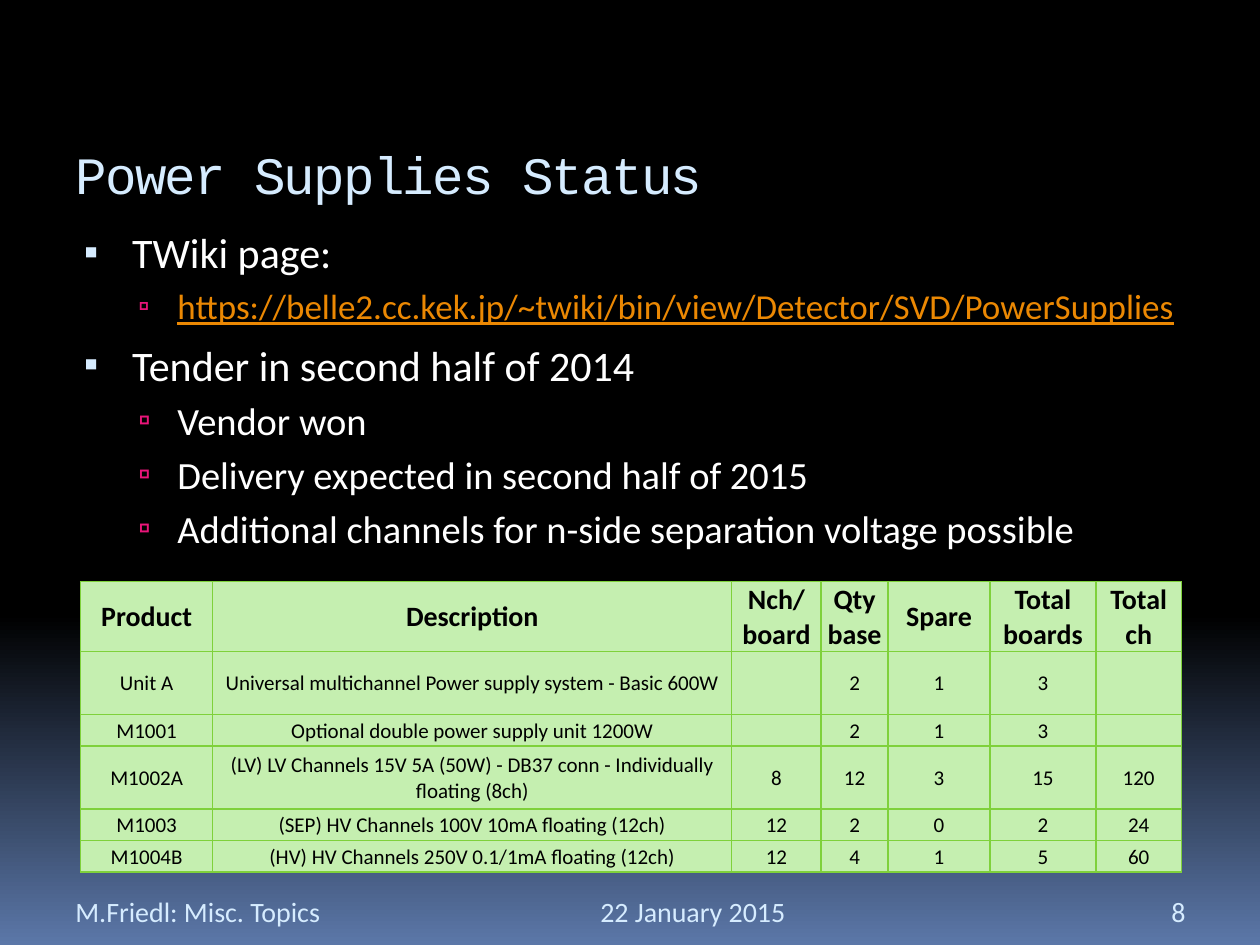
"""Build the power supplies status slide."""
from lxml import etree
from pptx import Presentation
from pptx.dml.color import RGBColor
from pptx.enum.text import MSO_ANCHOR, PP_ALIGN
from pptx.oxml.ns import qn
from pptx.util import Pt

LEFT, CENTER, RIGHT = PP_ALIGN.LEFT, PP_ALIGN.CENTER, PP_ALIGN.RIGHT
TOP, MIDDLE, BOTTOM = MSO_ANCHOR.TOP, MSO_ANCHOR.MIDDLE, MSO_ANCHOR.BOTTOM
BLACK = RGBColor(0x00, 0x00, 0x00)
WHITE = RGBColor(0xFF, 0xFF, 0xFF)
BLUE = RGBColor(0x5B, 0x77, 0xA8)
PALE = RGBColor(0xD6, 0xEC, 0xFF)
PINK = RGBColor(0xEA, 0x15, 0x7A)
ORANGE = RGBColor(0xEB, 0x88, 0x03)
GREEN = RGBColor(0x7F, 0xD1, 0x3B)
LIGHT_GREEN = RGBColor(0xC5, 0xEF, 0xB0)

LEVELS = [
    (32.4, 27.4, 7, "▪", PALE, 95),
    (58.3, 22.3, 4.4, "▫", PINK, 90),
]
BODY = [
    (0, "TWiki page:", {"size": 24}),
    (1, "https://belle2.cc.kek.jp/~twiki/bin/view/Detector/SVD/PowerSupplies",
     {"size": 20, "color": ORANGE, "underline": True}),
    (0, "Tender in second half of 2014", {"size": 24}),
    (1, "Vendor won", {"size": 22}),
    (1, "Delivery expected in second half of 2015", {"size": 22}),
    (1, "Additional channels for n-side separation voltage possible", {"size": 22}),
]
FOOTERS = [
    ("22 January 2015", 336, 144, LEFT),
    ("M.Friedl: Misc. Topics", 36, 378, LEFT),
    ("8", 624, 60.5, RIGHT),
]
COLUMNS = [75.6, 296.6, 51.1, 38.2, 58.3, 60.5, 49]
ROWS = [40, 36, 18, 36, 18, 18]
DATA = [
    ["Product", "Description", "Nch/ board", "Qty base", "Spare", "Total boards", "Total ch"],
    ["Unit A", "Universal multichannel Power supply system - Basic 600W", "", "2", "1", "3", ""],
    ["M1001", "Optional double power supply unit 1200W", "", "2", "1", "3", ""],
    ["M1002A", "(LV) LV Channels 15V 5A (50W) - DB37 conn - Individually floating (8ch)",
     "8", "12", "3", "15", "120"],
    ["M1003", "(SEP) HV Channels 100V 10mA floating (12ch)", "12", "2", "0", "2", "24"],
    ["M1004B", "(HV) HV Channels 250V 0.1/1mA floating (12ch)", "12", "4", "1", "5", "60"],
]


def write(p, text, size=16, color=WHITE, font="Calibri", bold=False, underline=False,
          align=LEFT, spacing=None):
    """Put formatted text into a paragraph."""
    p.alignment = align
    if not text:
        etree.SubElement(p._p, qn("a:endParaRPr"), sz=str(size * 100))
        return
    r = p.add_run()
    r.text = text
    f = r.font
    f.size, f.name, f.bold, f.underline = Pt(size), font, bold, underline
    f.color.rgb = color
    if spacing is not None:
        r._r.get_or_add_rPr().set("spc", str(spacing * 100))


def set_background(s):
    """Fade the slide from black to blue at the bottom."""
    fill = s.background.fill
    fill.gradient()
    fill.gradient_angle = 270
    for stop, position, color in zip(fill.gradient_stops, (0.65, 1), (BLACK, BLUE)):
        stop.position = position
        stop.color.rgb = color


def add_title(s, text):
    """Place and format the title placeholder."""
    sp = s.shapes.title
    sp.left, sp.top, sp.width, sp.height = Pt(36), Pt(72), Pt(648), Pt(54)
    sp.text_frame.vertical_anchor = MIDDLE
    write(sp.text_frame.paragraphs[0], text, size=30, color=PALE, font="Courier New", spacing=-1)


def add_box(s, left, top, width, height, anchor=TOP):
    """Add a wrapping text box and return its text frame."""
    tf = s.shapes.add_textbox(Pt(left), Pt(top), Pt(width), Pt(height)).text_frame
    tf.word_wrap = True
    tf.vertical_anchor = anchor
    return tf


def set_bullet(p, level, first):
    """Give a paragraph the bullet, indent and spacing of its level."""
    margin, hang, before, glyph, color, percent = LEVELS[level]
    p.level = level
    pPr = p._p.get_or_add_pPr()
    pPr.set("marL", str(Pt(margin)))
    pPr.set("indent", str(-Pt(hang)))
    clr = etree.SubElement(pPr, qn("a:buClr"))
    etree.SubElement(clr, qn("a:srgbClr"), val=str(color))
    etree.SubElement(pPr, qn("a:buSzPct"), val=str(percent * 1000))
    etree.SubElement(pPr, qn("a:buFont"), typeface="Calibri")
    etree.SubElement(pPr, qn("a:buChar"), char=glyph)
    if not first:
        p.space_before = Pt(before)


def add_bullets(s):
    """Add the bulleted body text."""
    tf = add_box(s, 36, 126, 660, 374.4)
    for i, (level, text, style) in enumerate(BODY):
        p = tf.add_paragraph() if i else tf.paragraphs[0]
        set_bullet(p, level, i == 0)
        write(p, text, **style)


def format_cell(cell):
    """Set the fill, margins and borders of a table cell."""
    cell.vertical_anchor = MIDDLE
    cell.margin_left = cell.margin_right = cell.margin_top = Pt(0.75)
    cell.margin_bottom = 0
    tcPr = cell._tc.get_or_add_tcPr()
    for side in ("lnL", "lnR", "lnT", "lnB"):
        ln = etree.SubElement(tcPr, qn("a:" + side), w=str(Pt(0.94)))
        solid = etree.SubElement(ln, qn("a:solidFill"))
        etree.SubElement(solid, qn("a:srgbClr"), val=str(GREEN))
    cell.fill.solid()
    cell.fill.fore_color.rgb = LIGHT_GREEN


def add_product_table(s):
    """Add the table of products and quantities."""
    frame = s.shapes.add_table(len(ROWS), len(COLUMNS), Pt(46), Pt(332.4),
                               Pt(sum(COLUMNS)), Pt(sum(ROWS)))
    table = frame.table
    table.horz_banding = False
    for column, width in zip(table.columns, COLUMNS):
        column.width = Pt(width)
    for i, (height, texts) in enumerate(zip(ROWS, DATA)):
        table.rows[i].height = Pt(height)
        for j, text in enumerate(texts):
            cell = table.cell(i, j)
            format_cell(cell)
            write(cell.text_frame.paragraphs[0], text, size=12 if i else 16,
                  color=BLACK, bold=i == 0, align=CENTER)


def main():
    """Build and save the presentation."""
    prs = Presentation()
    prs.slide_width, prs.slide_height = Pt(720), Pt(540)
    s = prs.slides.add_slide(prs.slide_layouts[5])
    set_background(s)
    add_title(s, "Power Supplies Status")
    add_bullets(s)
    for text, left, width, align in FOOTERS:
        tf = add_box(s, left, 505.4, width, 28.8, BOTTOM)
        write(tf.paragraphs[0], text, color=PALE, align=align)
    add_product_table(s)
    prs.save("out.pptx")


if __name__ == "__main__":
    main()
